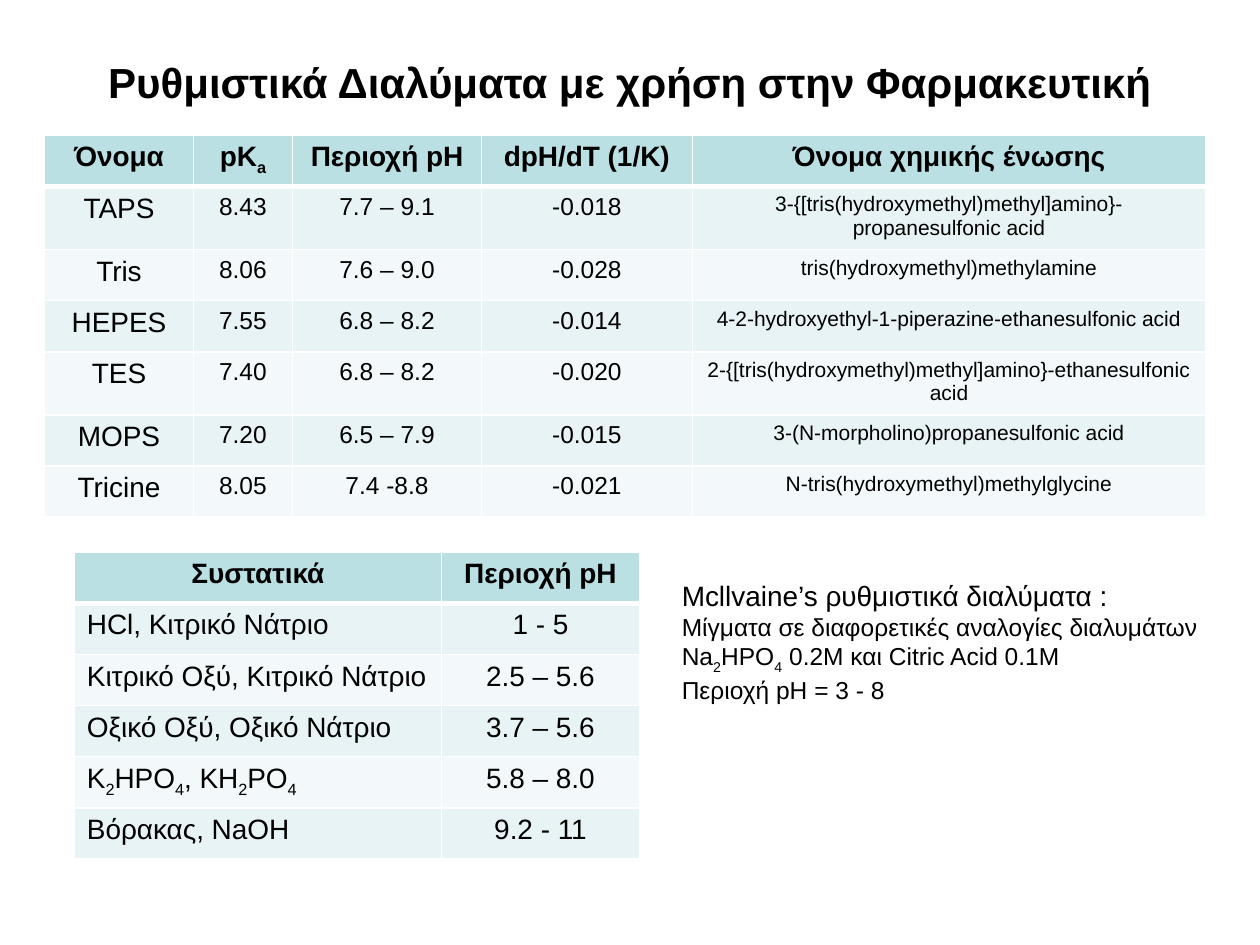
from lxml.etree import SubElement
from pptx import Presentation
from pptx.dml.color import RGBColor
from pptx.enum.text import MSO_ANCHOR as Anchor, PP_ALIGN as Align
from pptx.oxml.ns import qn
from pptx.util import Pt

FONT = "Arial"
BLACK = "000000"
WHITE = "FFFFFF"
HEADER_FILL = "BBE0E3"
BAND_FILLS = ("F3F9FA", "E7F3F4")
ROW_HEIGHT = 29.2

BUFFERS = [
    ("Όνομα", "pK~a~", "Περιοχή pH", "dpH/dT (1/K)", "Όνομα χημικής ένωσης"),
    ("TAPS", "8.43", "7.7 – 9.1", "-0.018", "3-{[tris(hydroxymethyl)methyl]amino}-propanesulfonic acid"),
    ("Tris", "8.06", "7.6 – 9.0", "-0.028", "tris(hydroxymethyl)methylamine"),
    ("HEPES", "7.55", "6.8 – 8.2", "-0.014", "4-2-hydroxyethyl-1-piperazine-ethanesulfonic acid"),
    ("TES", "7.40", "6.8 – 8.2", "-0.020", "2-{[tris(hydroxymethyl)methyl]amino}-ethanesulfonic acid"),
    ("MOPS", "7.20", "6.5 – 7.9", "-0.015", "3-(N-morpholino)propanesulfonic acid"),
    ("Tricine", "8.05", "7.4 -8.8", "-0.021", "N-tris(hydroxymethyl)methylglycine"),
]

COMPONENTS = [
    ("Συστατικά", "Περιοχή pH"),
    ("HCl, Κιτρικό Νάτριο", "1 - 5"),
    ("Κιτρικό Οξύ, Κιτρικό Νάτριο", "2.5 – 5.6"),
    ("Οξικό Οξύ, Οξικό Νάτριο", "3.7 – 5.6"),
    ("K~2~HPO~4~, KH~2~PO~4~", "5.8 – 8.0"),
    ("Βόρακας, NaOH", "9.2 - 11"),
]

MCILVAINE = [
    ("Mcllvaine’s ρυθμιστικά διαλύματα :", 16),
    ("Μίγματα σε διαφορετικές αναλογίες διαλυμάτων Na~2~HPO~4~ 0.2M και Citric Acid 0.1M", 14),
    ("Περιοχή pH = 3 - 8", 14),
]


def color(value):
    return RGBColor.from_string(value)


def write(para, text, size, bold=False, align=Align.LEFT):
    para.alignment = align
    for index, piece in enumerate(text.split("~")):
        if not piece:
            continue
        span = para.add_run()
        span.text = piece
        span.font.name = FONT
        span.font.size = Pt(size)
        span.font.bold = bold
        span.font.color.rgb = color(BLACK)
        if index % 2:
            span._r.get_or_add_rPr().set("baseline", "-25000")


def add_text(page, left, top, width, height, lines, bold=False,
             align=Align.LEFT, anchor=Anchor.TOP):
    box = page.shapes.add_textbox(Pt(left), Pt(top), Pt(width), Pt(height))
    frame = box.text_frame
    frame.word_wrap = True
    frame.vertical_anchor = anchor
    for index, (text, size) in enumerate(lines):
        para = frame.add_paragraph() if index else frame.paragraphs[0]
        write(para, text, size, bold, align)


def set_borders(cell, top, bottom):
    properties = cell._tc.get_or_add_tcPr()
    for side, width in (("L", 1), ("R", 1), ("T", top), ("B", bottom)):
        line = SubElement(properties, qn(f"a:ln{side}"), w=str(Pt(width)))
        fill = SubElement(line, qn("a:solidFill"))
        SubElement(fill, qn("a:srgbClr"), val=WHITE)


def add_grid(page, left, top, widths, rows, sizes, aligns):
    frame = page.shapes.add_table(len(rows), len(widths), Pt(left), Pt(top),
                                  Pt(sum(widths)), Pt(ROW_HEIGHT * len(rows)))
    table = frame.table
    for column, width in zip(table.columns, widths):
        column.width = Pt(width)
    for r, texts in enumerate(rows):
        header = r == 0
        table.rows[r].height = Pt(ROW_HEIGHT)
        for c, text in enumerate(texts):
            cell = table.cell(r, c)
            set_borders(cell, 3 if r == 1 else 1, 3 if header else 1)
            cell.fill.solid()
            cell.fill.fore_color.rgb = color(HEADER_FILL if header else BAND_FILLS[r % 2])
            write(cell.text_frame.paragraphs[0], text, 16 if header else sizes[c],
                  header, Align.CENTER if header else aligns[c])


def main():
    deck = Presentation()
    deck.slide_width, deck.slide_height = Pt(720), Pt(540)
    page = deck.slides.add_slide(deck.slide_layouts[6])
    add_text(page, 36, 21.6, 648, 50,
             [("Ρυθμιστικά Διαλύματα με χρήση στην Φαρμακευτική", 24)],
             True, Align.CENTER, Anchor.MIDDLE)
    add_grid(page, 25.5, 77.4, (85, 56.7, 108, 120.4, 293.5), BUFFERS,
             (16, 14, 14, 14, 12), [Align.CENTER] * 5)
    add_grid(page, 42.5, 315.6, (209.8, 113.2), COMPONENTS,
             (16, 16), (Align.LEFT, Align.CENTER))
    add_text(page, 382.5, 327, 317.5, 78, MCILVAINE)
    deck.save("out.pptx")


if __name__ == "__main__":
    main()
